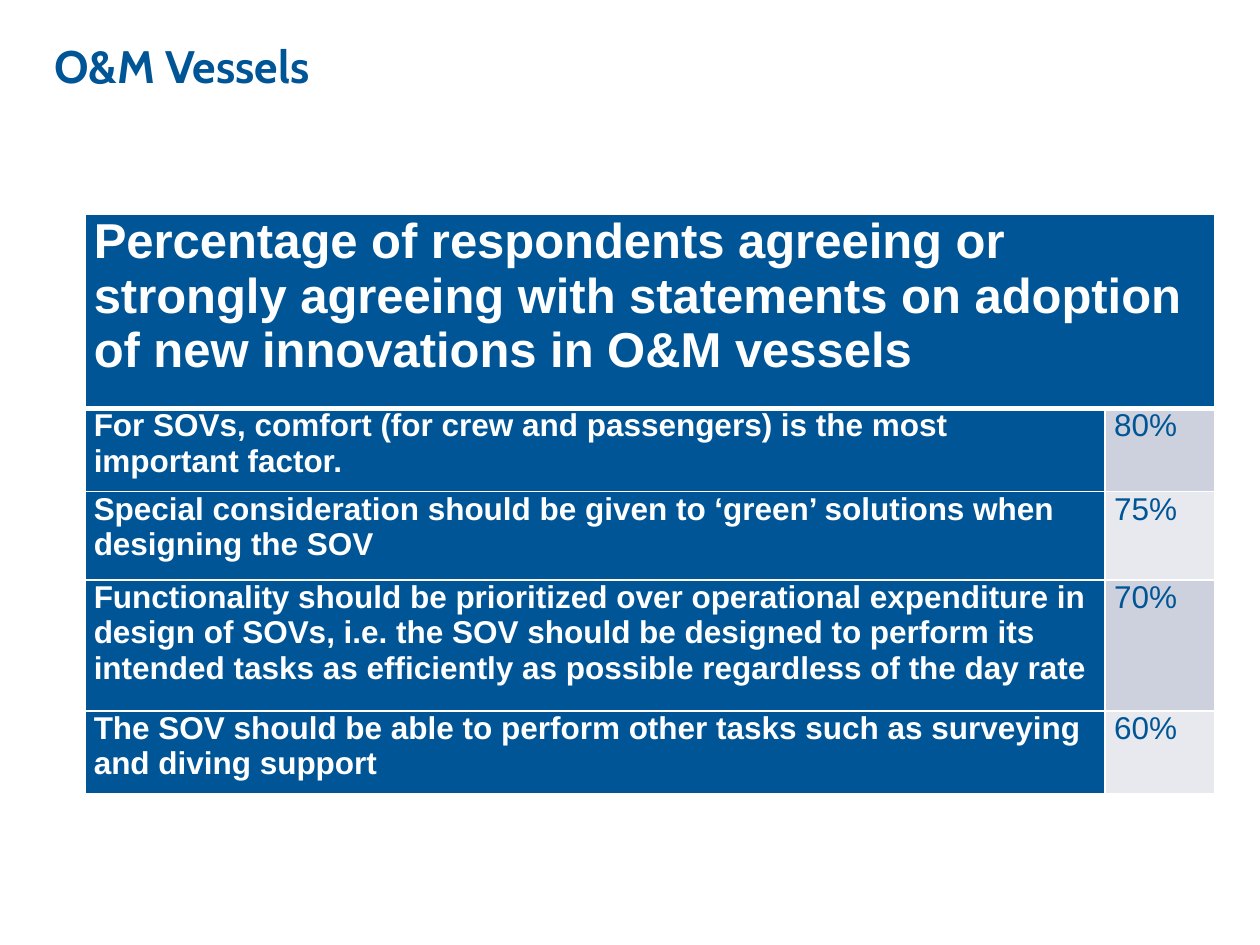
"""Builds the O&M Vessels slide with its survey results table."""
import lxml.etree
import pptx
import pptx.dml.color
import pptx.enum.text
import pptx.oxml.ns
import pptx.util

Cm = pptx.util.Cm
COLORS = {"blue": "005596", "white": "FFFFFF", "dark band": "CCD1DD", "light band": "E7E9EF"}


def write(frame, wording, color, **format_values):
    paragraph = frame.paragraphs[0]
    run = paragraph.add_run()
    run.text = wording
    run.font.color.rgb = pptx.dml.color.RGBColor.from_string(COLORS[color])
    for attribute, value in format_values.items():
        setattr(run.font, attribute, value)


def style_cell(cell, fill, top_width=1, bottom_width=1):
    margins = {"margin_left": 0.18, "margin_right": 0.18, "margin_top": 0, "margin_bottom": 0}
    for attribute, value in margins.items():
        setattr(cell, attribute, Cm(value))
    properties = cell._tc.get_or_add_tcPr()
    for side, width in {"L": 1, "R": 1, "T": top_width, "B": bottom_width}.items():
        border = lxml.etree.SubElement(
            properties, pptx.oxml.ns.qn(f"a:ln{side}"), w=str(pptx.util.Pt(width)))
        solid = lxml.etree.SubElement(border, pptx.oxml.ns.qn("a:solidFill"))
        lxml.etree.SubElement(solid, pptx.oxml.ns.qn("a:srgbClr"), val=COLORS["white"])
    cell.fill.solid()
    cell.fill.fore_color.rgb = pptx.dml.color.RGBColor.from_string(COLORS[fill])


presentation = pptx.Presentation()
presentation.slide_width, presentation.slide_height = Cm(25.4), Cm(19.05)
slide = presentation.slides.add_slide(presentation.slide_layouts[6])

title = slide.shapes.add_textbox(Cm(0.84), Cm(0.64), Cm(22.23), Cm(1.65)).text_frame
title_format = {"word_wrap": True, "vertical_anchor": pptx.enum.text.MSO_ANCHOR.TOP}
for attribute, value in title_format.items():
    setattr(title, attribute, value)
write(title, "O&M Vessels", "blue", name="Cabin", size=pptx.util.Pt(26), bold=True)

heading = ("Percentage of respondents agreeing or strongly agreeing with statements "
           "on adoption of new innovations in O&M vessels")
responses = [
    ("For SOVs, comfort (for crew and passengers) is the most important factor.", "80%"),
    ("Special consideration should be given to ‘green’ solutions when designing the SOV", "75%"),
    ("Functionality should be prioritized over operational expenditure in design of SOVs, "
     "i.e. the SOV should be designed to perform its intended tasks as efficiently as possible "
     "regardless of the day rate", "70%"),
    ("The SOV should be able to perform other tasks such as surveying and diving support", "60%"),
]
column_widths = [20.57, 2.21]
row_heights = [3.91, 1.68, 1.78, 2.64, 1.68]

survey = slide.shapes.add_table(
    len(row_heights), len(column_widths), Cm(1.71), Cm(4.32),
    Cm(sum(column_widths)), Cm(sum(row_heights))).table
for column, width in zip(survey.columns, column_widths):
    column.width = Cm(width)
for row, height in zip(survey.rows, row_heights):
    row.height = Cm(height)

survey.cell(0, 0).merge(survey.cell(0, 1))
for column in range(2):
    style_cell(survey.cell(0, column), "blue", bottom_width=3)
write(survey.cell(0, 0).text_frame, heading, "white",
      name="Arial", size=pptx.util.Pt(28), bold=True)

for number, (statement, share) in enumerate(responses, start=1):
    band = "dark band" if number % 2 else "light band"
    entries = [(statement, "white", "blue", True), (share, "blue", band, False)]
    for column, (wording, color, fill, bold) in enumerate(entries):
        cell = survey.cell(number, column)
        style_cell(cell, fill, top_width=3 if number == 1 else 1)
        write(cell.text_frame, wording, color, name="Arial", size=pptx.util.Pt(18), bold=bold)

presentation.save("out.pptx")
